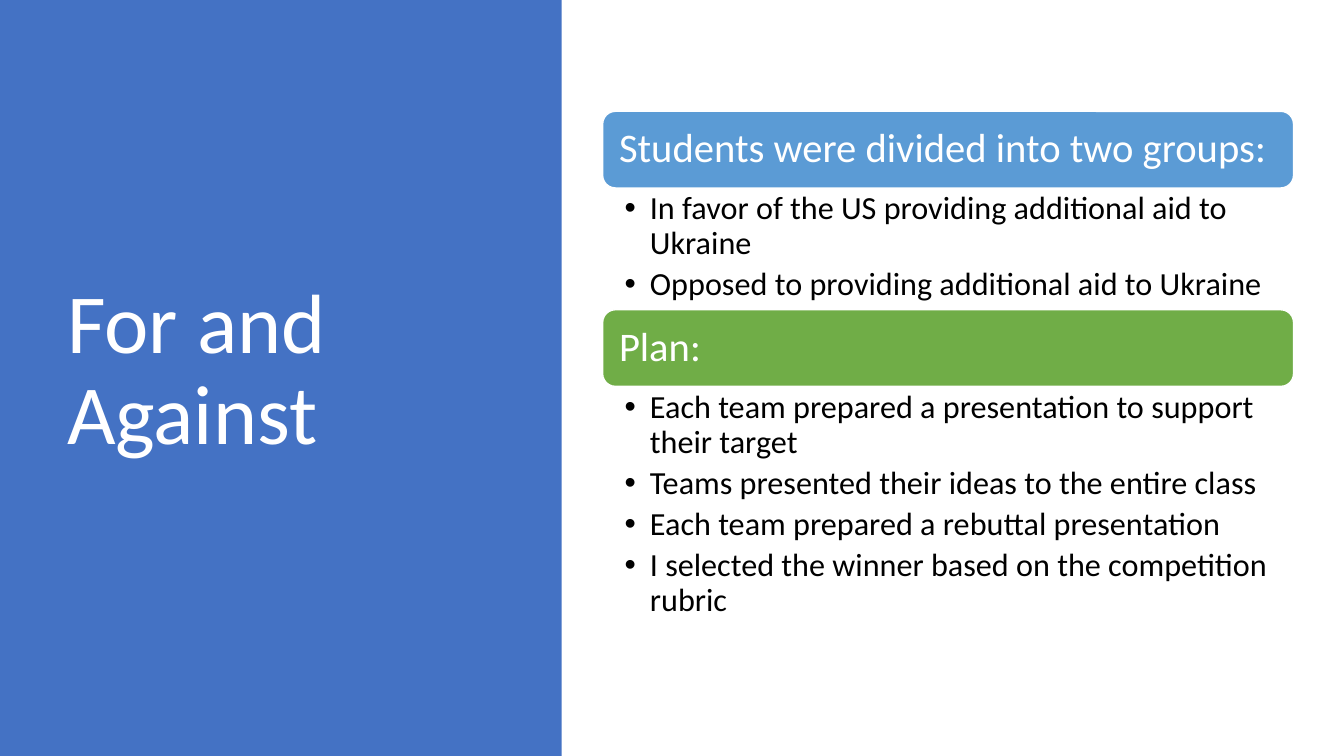
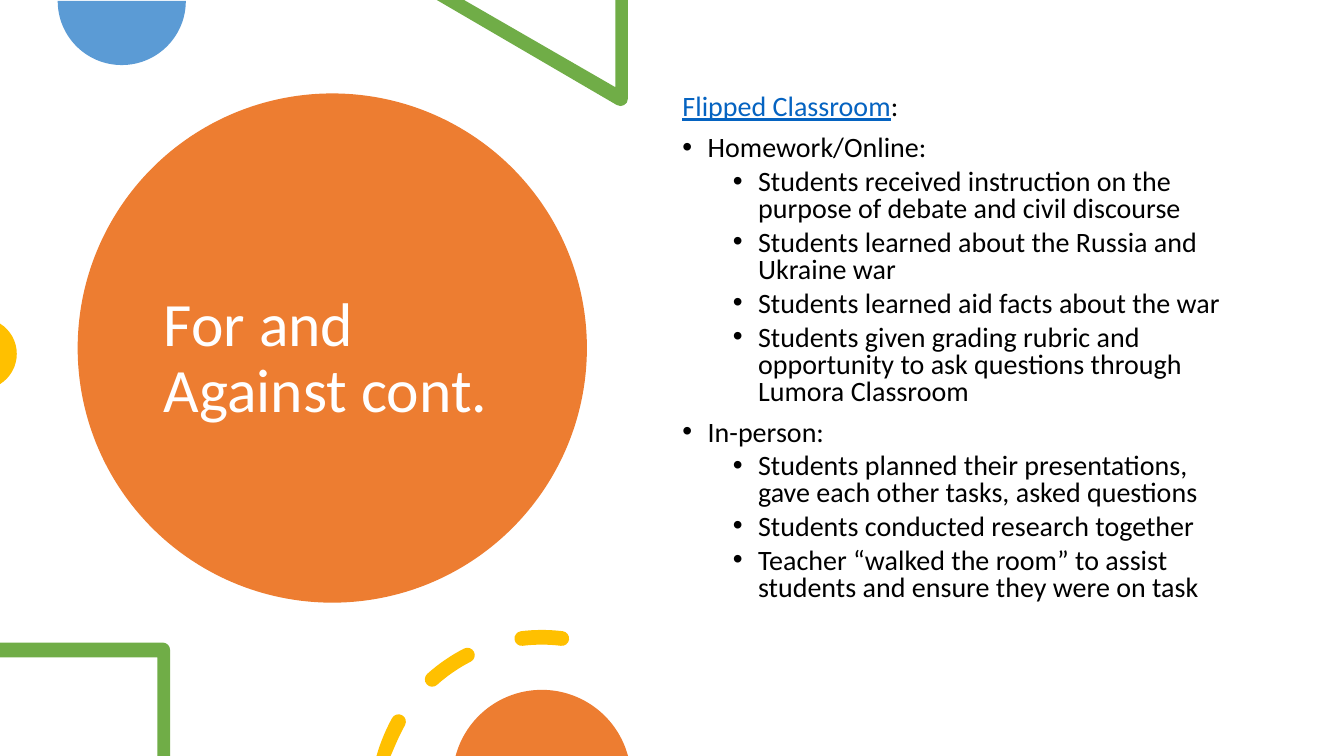
from math import ceil, cos, radians, sin, tan

from lxml.etree import SubElement
from pptx import Presentation
from pptx.dml.color import RGBColor
from pptx.enum.shapes import MSO_SHAPE
from pptx.enum.text import MSO_ANCHOR, PP_ALIGN
from pptx.oxml.ns import qn
from pptx.util import Pt

PX = 9525
WIDTH, HEIGHT = 1280, 720
FONT = "Calibri"
WHITE = RGBColor(0xFF, 0xFF, 0xFF)
BLACK = RGBColor(0x00, 0x00, 0x00)
NAVY = RGBColor(0x44, 0x72, 0xC4)
BLUE = RGBColor(0x5B, 0x9B, 0xD5)
GREEN = RGBColor(0x70, 0xAD, 0x47)
ORANGE = RGBColor(0xED, 0x7D, 0x31)
YELLOW = RGBColor(0xFF, 0xC0, 0x00)
LINK = RGBColor(0x05, 0x63, 0xC1)

GROUPS = [
    ("Students were divided into two groups:", BLUE, 116, [
        "In favor of the US providing additional aid to Ukraine",
        "Opposed to providing additional aid to Ukraine",
    ]),
    ("Plan:", GREEN, 233, [
        "Each team prepared a presentation to support their target",
        "Teams presented their ideas to the entire class",
        "Each team prepared a rebuttal presentation",
        "I selected the winner based on the competition rubric",
    ]),
]
CLASSROOM = [
    ("Homework/Online:", [
        "Students received instruction on the purpose of debate and civil discourse",
        "Students learned about the Russia and Ukraine war",
        "Students learned aid facts about the war",
        "Students given grading rubric and opportunity to ask questions through Lumora Classroom",
    ]),
    ("In-person:", [
        "Students planned their presentations, gave each other tasks, asked questions",
        "Students conducted research together",
        "Teacher “walked the room” to assist students and ensure they were on task",
    ]),
]


def scaled(*lengths):
    return [round(length * PX) for length in lengths]


def paint(shape, color):
    shape.shadow.inherit = False
    shape.fill.solid()
    shape.fill.fore_color.rgb = color
    shape.line.fill.background()
    return shape


def add_block(page, kind, box, color):
    return paint(page.shapes.add_shape(kind, *scaled(*box)), color)


def bend_curves(shape, contours):
    lines = iter(list(shape._element.iter(qn("a:lnTo"))))
    for contour in contours:
        for stretch in contour[1:]:
            curve, *others = [next(lines) for point in stretch]
            if others:
                curve.tag = qn("a:cubicBezTo")
            for line in others:
                curve.append(line[0])
                line.getparent().remove(line)


def add_outline(page, contours, color):
    builder = None
    for contour in contours:
        points = [scaled(x, min(y, HEIGHT)) for stretch in contour for x, y in stretch]
        if builder is None:
            builder = page.shapes.build_freeform(*points[0], scale=1.0)
        else:
            builder.move_to(*points[0])
        builder.add_line_segments(points[1:], close=True)
    shape = paint(builder.convert_to_shape(), color)
    bend_curves(shape, contours)


def corners(*points):
    return [[point] for point in points]


def arc(x, y, radius, start, end):
    count = ceil(abs(end - start) / 90)
    step = radians(end - start) / count
    reach = 4 / 3 * tan(step / 4)

    def at(angle, pull=0):
        return (x + radius * (cos(angle) - pull * sin(angle)),
                y + radius * (sin(angle) + pull * cos(angle)))

    angles = [radians(start) + step * index for index in range(count + 1)]
    return corners(at(angles[0])) + [
        [at(first, reach), at(last, -reach), at(last)]
        for first, last in zip(angles, angles[1:])
    ]


def arc_dash(x, y, radius, half, start, end, cut=False):
    def cap(angle):
        turn = radians(angle % 360)
        return x + radius * cos(turn), y + radius * sin(turn), half

    outline = arc(x, y, radius + half, start, end)
    outline += arc(*cap(end), end, end + 180)[1:]
    inner = arc(x, y, radius - half, end, start)
    outline += inner[1:]
    if not cut:
        outline += arc(*cap(start), start + 180, start + 360)[1:]
    return outline


def set_frame(frame, anchor, insets=(10, 5, 10, 5)):
    frame.word_wrap = True
    frame.vertical_anchor = anchor
    (frame.margin_left, frame.margin_top,
     frame.margin_right, frame.margin_bottom) = scaled(*insets)
    return frame


def add_frame(page, box, anchor, **options):
    return set_frame(page.shapes.add_textbox(*scaled(*box)).text_frame, anchor, **options)


def write(frame, spans, size, color, spacing=0.9, before=0, after=0, bullet_at=None):
    para = frame.paragraphs[0]
    if para.runs:
        para = frame.add_paragraph()
    for text in spans:
        para.add_run().text = text
    para.alignment = PP_ALIGN.LEFT
    para.line_spacing = spacing
    para.space_before = Pt(before)
    para.space_after = Pt(after)
    if bullet_at is not None:
        properties = para._p.get_or_add_pPr()
        indent, hang = scaled(bullet_at, 24)
        properties.set("marL", str(indent))
        properties.set("indent", str(-hang))
        SubElement(properties, qn("a:buFont")).set("typeface", "Arial")
        SubElement(properties, qn("a:buChar")).set("char", "•")
    para.font.name = FONT
    para.font.size = Pt(size)
    para.font.color.rgb = color
    return para


def add_title(page, box, text, size):
    write(add_frame(page, box, MSO_ANCHOR.MIDDLE), [text], size, WHITE)


def add_groups(page, left, top, width, header_height=73):
    for heading, color, height, points in GROUPS:
        header = add_block(page, MSO_SHAPE.ROUNDED_RECTANGLE,
                           (left, top, width, header_height), color)
        header.line.color.rgb = WHITE
        header.line.width = Pt(1)
        frame = set_frame(header.text_frame, MSO_ANCHOR.MIDDLE, insets=(12, 12, 12, 12))
        write(frame, [heading], 29, WHITE)
        top += header_height
        frame = add_frame(page, (left, top, width, height), MSO_ANCHOR.TOP,
                          insets=(21, 4, 22, 4))
        for point in points:
            write(frame, [point], 23, BLACK, after=4.6, bullet_at=24)
        top += height


def add_ornaments(page):
    add_outline(page, [arc(116, 1, 61, 0, 180)], BLUE)
    triangle = corners((598, 0), (586, 0), (586, 83), (442, 0), (416, 0))
    add_outline(page, [triangle + arc(591, 94, 7, 120, 0)], GREEN)
    add_outline(page, [arc(-18, 337, 34, -58, 58)], YELLOW)
    bracket = corners((0, 612), (0, 626), (150, 626), (150, 720), (162, 720))
    add_outline(page, [bracket + arc(155, 619, 7, 0, -90)], GREEN)
    dashes = [(195, 209, True), (228, 243), (263, 277)]
    add_outline(page, [arc_dash(516, 763, 156, 7, *dash) for dash in dashes], YELLOW)
    add_outline(page, [arc(516, 742, 85, 195, 345)], ORANGE)


def add_classroom(page, box):
    frame = add_frame(page, box, MSO_ANCHOR.TOP)
    style = dict(size=20, color=BLACK, spacing=0.8)
    lead = write(frame, ["Flipped Classroom", ":"], before=10, **style)
    link = lead.runs[0].font
    link.color.rgb = LINK
    link.underline = True
    for heading, points in CLASSROOM:
        write(frame, [heading], before=10, bullet_at=24, **style)
        for point in points:
            write(frame, [point], before=5, bullet_at=72, **style)


def build_groups_page(page):
    add_block(page, MSO_SHAPE.RECTANGLE, (0, 0, 535, HEIGHT), NAVY)
    add_title(page, (54, 65, 399, 578), "For and Against", 60)
    add_groups(page, 574, 106, 658)


def build_classroom_page(page):
    add_block(page, MSO_SHAPE.OVAL, (74, 89, 485, 485), ORANGE)
    add_title(page, (146, 129, 340, 427), "For and Against cont.", 44)
    add_ornaments(page)
    add_classroom(page, (640, 86, 552, 514))


def main():
    deck = Presentation()
    deck.slide_width, deck.slide_height = scaled(WIDTH, HEIGHT)
    for build in (build_groups_page, build_classroom_page):
        build(deck.slides.add_slide(deck.slide_layouts[6]))
    deck.save("out.pptx")


if __name__ == "__main__":
    main()
